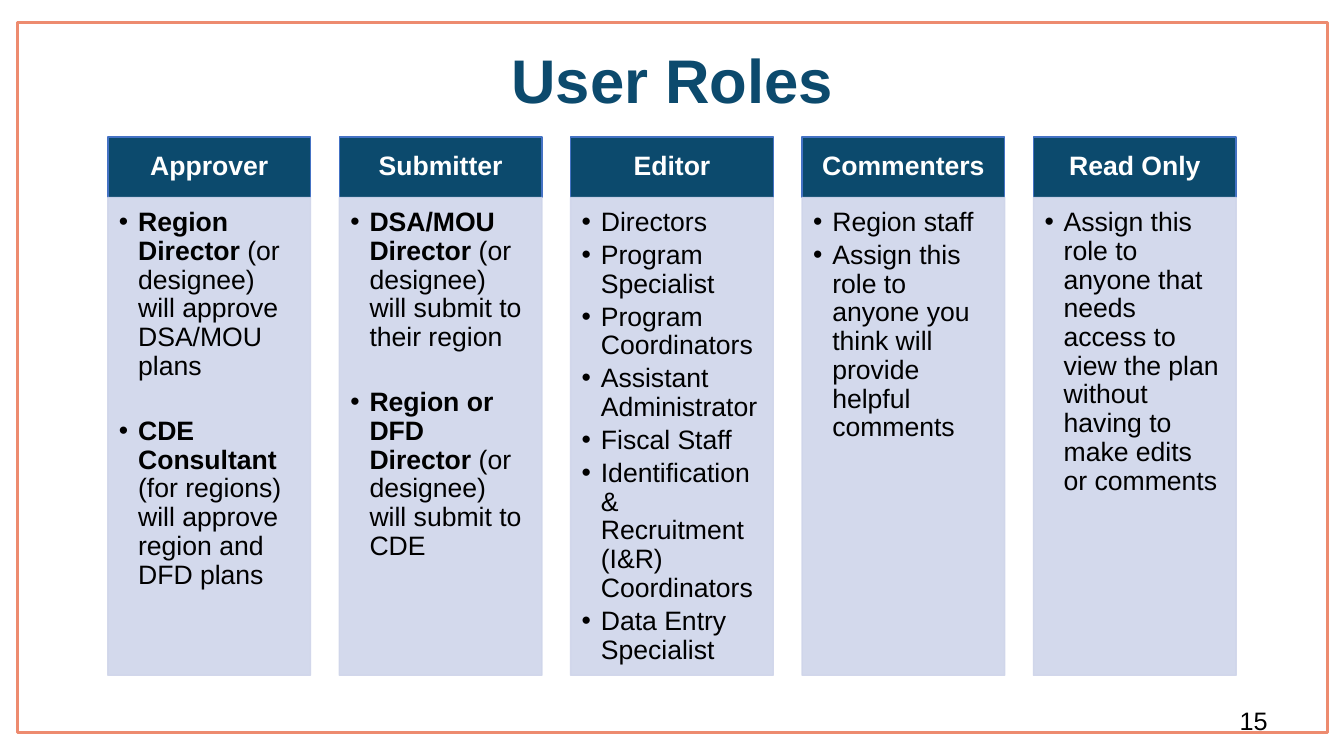
from dataclasses import dataclass

from lxml import etree
from pptx import Presentation
from pptx.dml.color import RGBColor
from pptx.enum.shapes import MSO_SHAPE
from pptx.enum.text import MSO_ANCHOR, PP_ALIGN
from pptx.oxml.ns import qn
from pptx.util import Inches, Pt

RECT = MSO_SHAPE.RECTANGLE
TOP, MIDDLE = MSO_ANCHOR.TOP, MSO_ANCHOR.MIDDLE
LEFT, CENTER, RIGHT = PP_ALIGN.LEFT, PP_ALIGN.CENTER, PP_ALIGN.RIGHT


@dataclass(frozen=True)
class Theme:
    font: str = "Arial"
    navy: str = "0C4A6D"
    coral: str = "ED8B6F"
    blue: str = "4472C4"
    lavender: str = "CFD5EA"
    white: str = "FFFFFF"
    black: str = "000000"
    title: int = 44
    body: int = 19
    number: int = 18


THEME = Theme()

# Each role has a heading, its bullets as (bold lead, plain text), and the gap after a bullet.
ROLES = [
    ("Approver", [
        ("Region Director ", "(or designee) will approve DSA/MOU plans"),
        ("CDE Consultant ", "(for regions) will approve region and DFD plans"),
    ], 26),
    ("Submitter", [
        ("DSA/MOU Director ", "(or designee) will submit to their region"),
        ("Region or DFD Director ", "(or designee) will submit to CDE"),
    ], 26),
    ("Editor", [
        ("", "Directors"),
        ("", "Program Specialist"),
        ("", "Program Coordinators"),
        ("", "Assistant Administrator"),
        ("", "Fiscal Staff"),
        ("", "Identification & Recruitment (I&R) Coordinators"),
        ("", "Data Entry Specialist"),
    ], 3),
    ("Commenters", [
        ("", "Region staff"),
        ("", "Assign this role to anyone you think will provide helpful comments"),
    ], 3),
    ("Read Only", [
        ("", "Assign this role to anyone that needs access to view the plan "
             "without having to make edits or comments"),
    ], 3),
]

FIRST_LEFT, LAST_LEFT, COLUMN_WIDTH = 1.07, 10.25, 2.01
HEAD_TOP, HEAD_HEIGHT, BODY_HEIGHT = 1.36, 0.6, 4.74


def add_rect(slide, box, line, weight, fill=None):
    sp = slide.shapes.add_shape(RECT, *map(Inches, box))
    sp.shadow.inherit = False
    sp.line.color.rgb = RGBColor.from_string(line)
    sp.line.width = Pt(weight)
    if fill:
        sp.fill.solid()
        sp.fill.fore_color.rgb = RGBColor.from_string(fill)
    else:
        sp.fill.background()
    return sp


def set_opacity(sp, percent):
    """Apply one opacity to both the fill and the outline."""
    for color in sp._element.spPr.iter(qn("a:srgbClr")):
        etree.SubElement(color, qn("a:alpha"), val=str(percent * 1000))


def set_frame(sp, anchor, insets=(0.1, 0.05, 0.1, 0.05)):
    tf = sp.text_frame
    tf.word_wrap = True
    tf.vertical_anchor = anchor
    tf.margin_left, tf.margin_top, tf.margin_right, tf.margin_bottom = map(Inches, insets)
    return tf


def add_run(p, text, size, color, bold=False):
    r = p.add_run()
    r.text = text
    r.font.name = THEME.font
    r.font.size = Pt(size)
    r.font.bold = bold
    r.font.color.rgb = RGBColor.from_string(color)


def write_line(tf, text, size, color, align, bold=False, spacing=1.0):
    p = tf.paragraphs[0]
    p.alignment = align
    p.line_spacing = spacing
    add_run(p, text, size, color, bold)


def add_label(slide, box, text, anchor=TOP, **style):
    sp = slide.shapes.add_textbox(*map(Inches, box))
    write_line(set_frame(sp, anchor), text, **style)


def set_bullet(p, indent):
    pPr = p._p.get_or_add_pPr()
    pPr.set("marL", str(Inches(indent)))
    pPr.set("indent", str(-Inches(indent)))
    etree.SubElement(pPr, qn("a:buFont"), typeface=THEME.font)
    etree.SubElement(pPr, qn("a:buChar"), char="•")


def write_bullets(tf, bullets, gap):
    for i, (lead, text) in enumerate(bullets):
        p = tf.add_paragraph() if i else tf.paragraphs[0]
        set_bullet(p, 0.19)
        p.alignment = LEFT
        p.line_spacing = 0.9
        p.space_after = Pt(gap)
        if lead:
            add_run(p, lead, THEME.body, THEME.black, bold=True)
        add_run(p, text, THEME.body, THEME.black)


def add_role(slide, left, heading, bullets, gap):
    head = add_rect(slide, (left, HEAD_TOP, COLUMN_WIDTH, HEAD_HEIGHT),
                    THEME.blue, 1, THEME.navy)
    write_line(set_frame(head, MIDDLE, (0.15, 0.08, 0.15, 0.08)), heading,
               THEME.body, THEME.white, CENTER, bold=True, spacing=0.9)
    body = add_rect(slide, (left, HEAD_TOP + HEAD_HEIGHT, COLUMN_WIDTH, BODY_HEIGHT),
                    THEME.lavender, 1, THEME.lavender)
    set_opacity(body, 90)
    write_bullets(set_frame(body, TOP, (0.11, 0.11, 0.15, 0.17)), bullets, gap)


def main():
    prs = Presentation()
    prs.slide_width, prs.slide_height = Inches(13.33), Inches(7.5)
    slide = prs.slides.add_slide(prs.slide_layouts[6])

    add_rect(slide, (0.17, 0.22, 13, 7.05), THEME.coral, 2)
    add_label(slide, (0.17, 0.1, 13, 1.45), "User Roles", MIDDLE, size=THEME.title,
              color=THEME.navy, align=CENTER, bold=True, spacing=0.9)
    add_label(slide, (9.56, 6.95, 3.11, 0.4), "15", size=THEME.number,
              color=THEME.black, align=RIGHT)

    pitch = (LAST_LEFT - FIRST_LEFT) / (len(ROLES) - 1)
    for i, role in enumerate(ROLES):
        add_role(slide, FIRST_LEFT + i * pitch, *role)

    prs.save("out.pptx")


if __name__ == "__main__":
    main()
